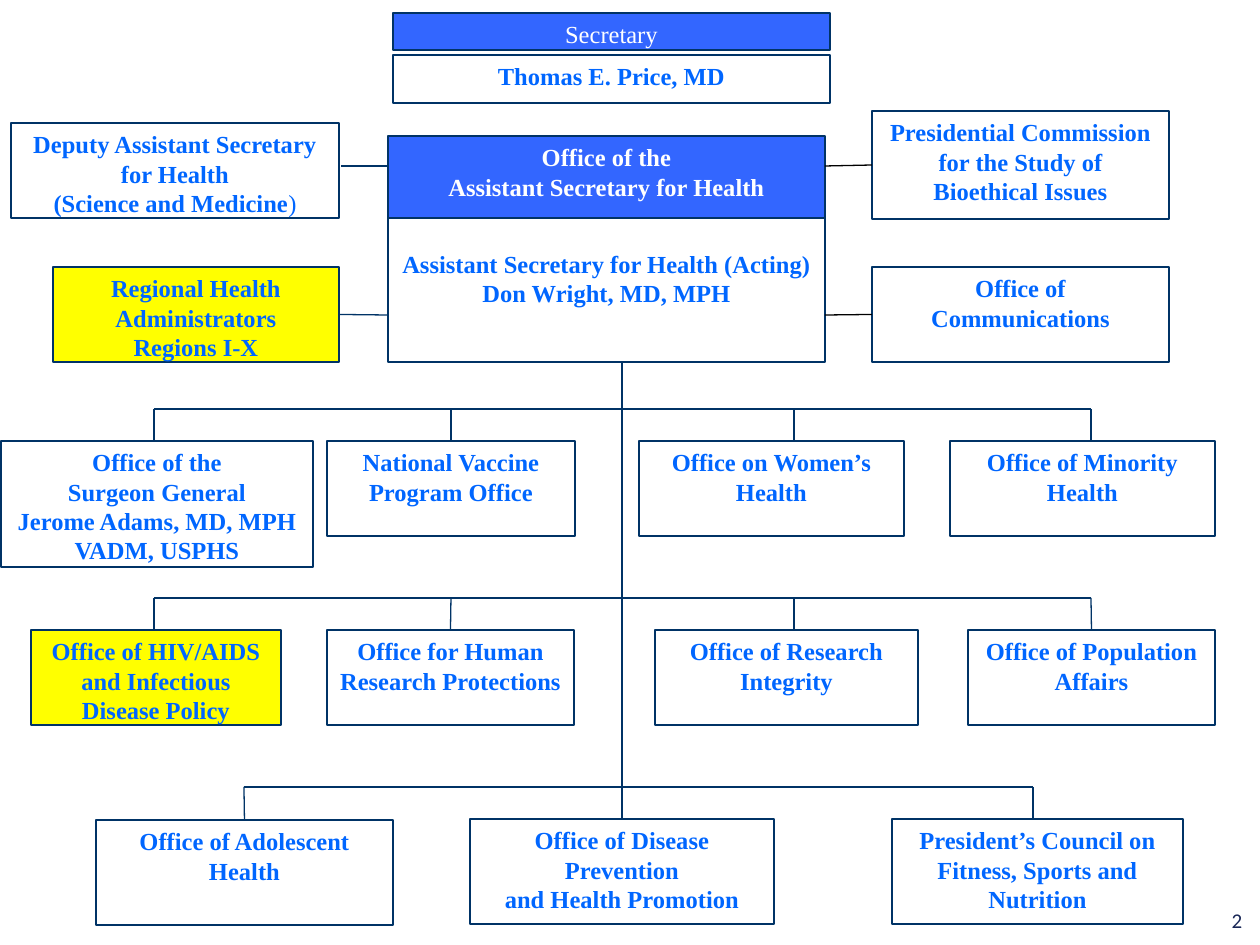
from lxml.etree import SubElement
from pptx import Presentation
from pptx.dml.color import RGBColor
from pptx.enum.shapes import MSO_CONNECTOR as Connector, MSO_SHAPE as Shape
from pptx.enum.text import MSO_ANCHOR as Anchor, PP_ALIGN as Align
from pptx.oxml.ns import qn
from pptx.util import Emu, Pt

SCALE = 914400 / 126
COLORS = {"white": "FFFFFF", "blue": "3366FF", "yellow": "FFFF00", "navy": "003366",
          "text": "0066FF", "black": "000000", "number": "192757"}


def px(value):
    return Emu(round(value * SCALE))


def color(name):
    return RGBColor.from_string(COLORS[name])


presentation = Presentation()
presentation.slide_width, presentation.slide_height = px(1260), px(945)
slide = presentation.slides.add_slide(presentation.slide_layouts[6])

# Boxes: name, left, top, width, height, fill, lines of text
boxes = [
    ("secretary", 393, 13, 437, 37, "blue", ["Secretary"]),
    ("price", 393, 55, 437, 48, "white", ["Thomas E. Price, MD"]),
    ("office", 388, 136, 437, 82, "blue", ["Office of the", "Assistant Secretary for Health"]),
    ("assistant", 388, 218, 437, 144, "white",
     ["Assistant Secretary for Health (Acting)", "Don Wright, MD, MPH"]),
    ("deputy", 11, 123, 328, 95, "white",
     ["Deputy Assistant Secretary", "for Health", "(Science and Medicine"]),
    ("regional", 53, 267, 286, 95, "yellow", ["Regional Health Administrators", "Regions I-X"]),
    ("commission", 872, 111, 297, 108, "white",
     ["Presidential Commission for the Study of Bioethical Issues"]),
    ("communications", 872, 267, 297, 95, "white", ["Office of Communications"]),
    ("surgeon", 1, 441, 312, 126, "white",
     ["Office of the", "Surgeon General", "Jerome Adams, MD, MPH", "VADM, USPHS"]),
    ("vaccine", 327, 441, 248, 95, "white", ["National Vaccine Program Office"]),
    ("women", 639, 441, 265, 95, "white", ["Office on Women’s Health"]),
    ("minority", 950, 441, 265, 95, "white", ["Office of Minority Health"]),
    ("hiv", 31, 630, 250, 95, "yellow", ["Office of HIV/AIDS and Infectious Disease Policy"]),
    ("protections", 327, 630, 247, 95, "white", ["Office for Human Research Protections"]),
    ("integrity", 655, 630, 263, 95, "white", ["Office of Research Integrity"]),
    ("population", 968, 630, 247, 95, "white", ["Office of Population Affairs"]),
    ("adolescent", 96, 820, 297, 105, "white", ["Office of Adolescent Health"]),
    ("prevention", 470, 819, 304, 105, "white",
     ["Office of Disease Prevention", "and Health Promotion"]),
    ("fitness", 892, 819, 291, 105, "white",
     ["President’s Council on", "Fitness, Sports and Nutrition"]),
]
shapes = {}
for name, left, top, width, height, fill, lines in boxes:
    shape = slide.shapes.add_shape(Shape.RECTANGLE, px(left), px(top), px(width), px(height))
    shape.shadow.inherit = False
    shape.fill.solid()
    shape.fill.fore_color.rgb = color(fill)
    shape.line.color.rgb = color("navy")
    shape.line.width = Pt(0.75)
    frame = shape.text_frame
    frame.word_wrap = True
    frame.vertical_anchor = Anchor.TOP
    for index, line in enumerate(lines):
        paragraph = frame.add_paragraph() if index else frame.paragraphs[0]
        paragraph.alignment = Align.CENTER
        paragraph.font.name = "Times New Roman"
        runs = [(line, name != "secretary")]
        if line.startswith("("):
            runs.append((")", False))
        for text, bold in runs:
            run = paragraph.add_run()
            run.text = text
            run.font.name = "Times New Roman"
            run.font.size = Pt(14)
            run.font.bold = bold
            run.font.color.rgb = color("white" if fill == "blue" else "text")
    shapes[name] = shape
shapes["assistant"].text_frame.margin_top = px(31)

# Lines: start, end, colour, box joined at the end, its side
lines = [
    (388, 166, 341, 166, "navy", None, None),
    (388, 315, 341, 315, "navy", "regional", 3),
    (825, 166, 872, 166, "black", "commission", 1),
    (825, 315, 872, 315, "black", "communications", 1),
    (622, 362, 622, 787, "navy", None, None),
]

# Each row: bar height, then the drops from it to the boxes below
rows = [
    (409, [(154, 441, None), (451, 441, "vaccine"), (794, 441, None), (1091, 441, None)]),
    (598, [(154, 630, None), (451, 630, "protections"), (794, 630, None),
           (1091, 630, "population")]),
    (787, [(244, 820, "adolescent"), (622, 819, "prevention"), (1033, 819, None)]),
]
for bar, drops in rows:
    lines.append((drops[0][0], bar, drops[-1][0], bar, "navy", None, None))
    lines += [(x, bar, x, bottom, "navy", box, 0) for x, bottom, box in drops]

for x1, y1, x2, y2, line_color, box, side in lines:
    connector = slide.shapes.add_connector(Connector.STRAIGHT, px(x1), px(y1), px(x2), px(y2))
    connector.line.color.rgb = color(line_color)
    connector.line.width = Pt(0.75)
    SubElement(connector.element.spPr, qn("a:effectLst"))
    if box:
        connector.end_connect(shapes[box], side)

# Slide number
number = slide.shapes.add_textbox(px(1212), px(901), px(50), px(38))
number.text_frame.word_wrap = True
number.text_frame.vertical_anchor = Anchor.BOTTOM
paragraph = number.text_frame.paragraphs[0]
paragraph.alignment = Align.CENTER
run = paragraph.add_run()
run.text = "2"
run.font.name = "Calibri"
run.font.size = Pt(12)
run.font.color.rgb = color("number")

presentation.save("out.pptx")
